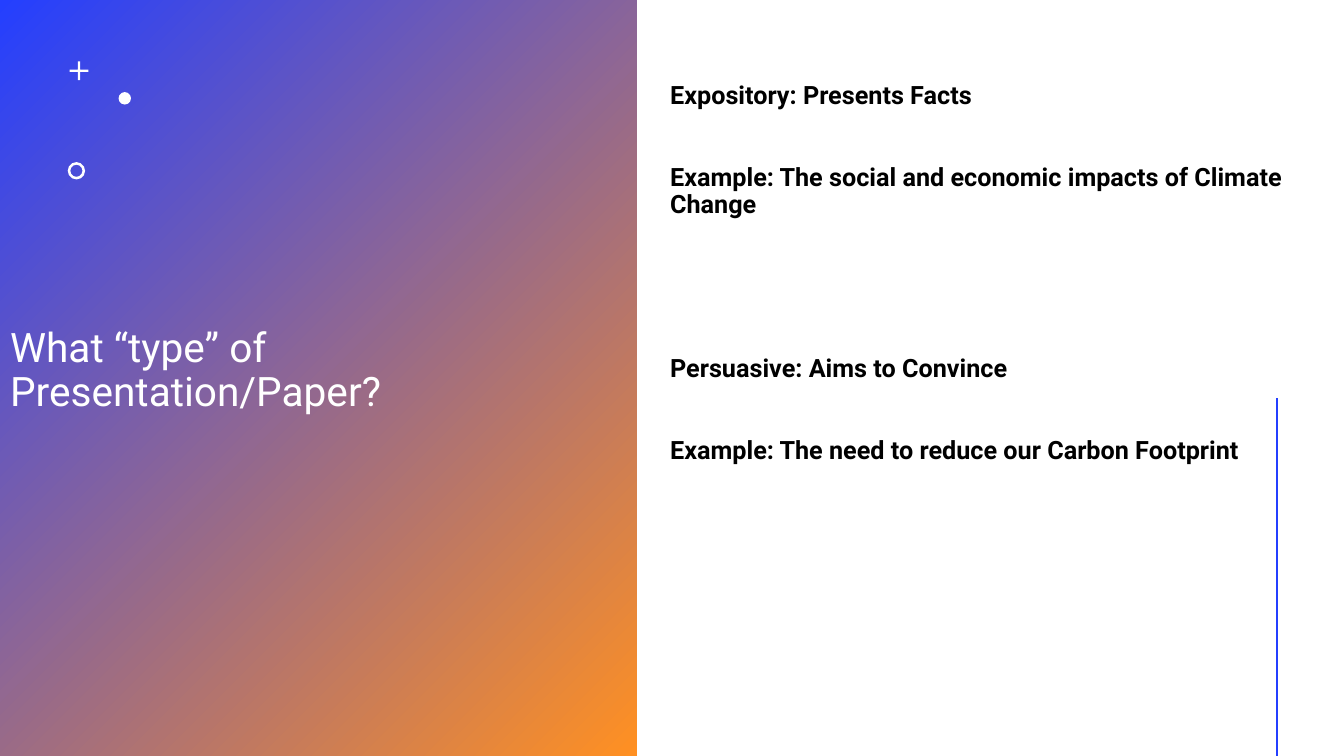
from lxml import etree
from pptx import Presentation
from pptx.dml.color import RGBColor
from pptx.enum import shapes as kinds, text as txt
from pptx.oxml.ns import qn
from pptx.util import Pt

WIDE, HIGH = 960, 540
FONT = "Roboto"
BLUE, ORANGE, WHITE, BLACK = "243FFF", "FF9022", "FFFFFF", "000000"
# Each point with the space before it
POINTS = [
    ("Expository: Presents Facts", 10),
    ("Example: The social and economic impacts of Climate Change", 39.2),
    ("Persuasive: Aims to Convince", 97.6),
    ("Example: The need to reduce our Carbon Footprint", 39.2),
]


def color(code):
    return RGBColor.from_string(code)


def write(par, words, size=18, tint=BLACK, bold=False, before=0):
    par.alignment = txt.PP_ALIGN.LEFT
    par.line_spacing = 0.9
    par.space_before = Pt(before)
    run = par.add_run()
    run.text = words
    font = run.font
    font.name, font.size, font.bold = FONT, Pt(size), bold
    font.color.rgb = color(tint)


def center(frame):
    """Wrap the text and anchor it in the middle of its box."""
    frame.word_wrap = True
    frame.auto_size = txt.MSO_AUTO_SIZE.NONE
    frame.vertical_anchor = txt.MSO_ANCHOR.MIDDLE


def draw(slide, kind, left, top, wide, high, fill=WHITE):
    shape = slide.shapes.add_shape(kind, Pt(left), Pt(top), Pt(wide), Pt(high))
    shape.shadow.inherit = False
    shape.line.fill.background()
    shape.fill.solid()
    shape.fill.fore_color.rgb = color(fill)
    return shape


def add_marks(slide, left, top):
    """Place the plus, dot and ring from the top left corner of their group."""
    auto = kinds.MSO_SHAPE
    plus = draw(slide, auto.CROSS, left + 1.4, top, 13.4, 13.4)
    plus.adjustments[0] = 0.44
    draw(slide, auto.OVAL, left + 36.3, top + 22, 8.9, 8.9)
    ring = draw(slide, auto.DONUT, left, top + 72, 12.4, 12.4)
    ring.adjustments[0] = 0.15


def add_panel(slide, left, top, wide, high):
    panel = draw(slide, kinds.MSO_SHAPE.RECTANGLE, left, top, wide, high)
    panel.fill.gradient()
    panel.fill.gradient_angle = 315
    for stop, tint, place in zip(panel.fill.gradient_stops, (BLUE, ORANGE), (0, 1)):
        stop.color.rgb = color(tint)
        stop.position = place

    title = slide.shapes.title
    title.left, title.top = Pt(left), Pt(top + 30.2)
    title.width, title.height = Pt(wide), Pt(high - 69.8)
    center(title.text_frame)
    write(title.text_frame.paragraphs[0], "What “type” of Presentation/Paper?",
          size=29, tint=WHITE)
    panel.element.addnext(title.element)  # title sits above the panel
    add_marks(slide, left + 48.4, top + 43.8)


def add_points(slide, left, top, wide, high):
    box = slide.shapes.add_textbox(Pt(left), Pt(top), Pt(wide), Pt(high))
    frame = box.text_frame
    center(frame)
    for i, (words, gap) in enumerate(POINTS):
        par = frame.add_paragraph() if i else frame.paragraphs[0]
        write(par, words, bold=True, before=gap)


def add_rule(slide, left, top, high):
    rule = slide.shapes.add_connector(
        kinds.MSO_CONNECTOR.STRAIGHT, Pt(left), Pt(top), Pt(left), Pt(top + high))
    rule.line.color.rgb = color(BLUE)
    rule.line.width = Pt(2)
    etree.SubElement(rule.element.spPr, qn("a:effectLst"))


def main():
    deck = Presentation()
    deck.slide_width, deck.slide_height = Pt(WIDE), Pt(HIGH)
    slide = deck.slides.add_slide(deck.slide_layouts.get_by_name("Title Only"))
    add_panel(slide, 0, 0, 455, HIGH)
    add_points(slide, 471.6, 12.2, 471.6, 367.2)
    add_rule(slide, 912.2, 284.4, HIGH - 284.4)
    deck.save("out.pptx")


if __name__ == "__main__":
    main()
